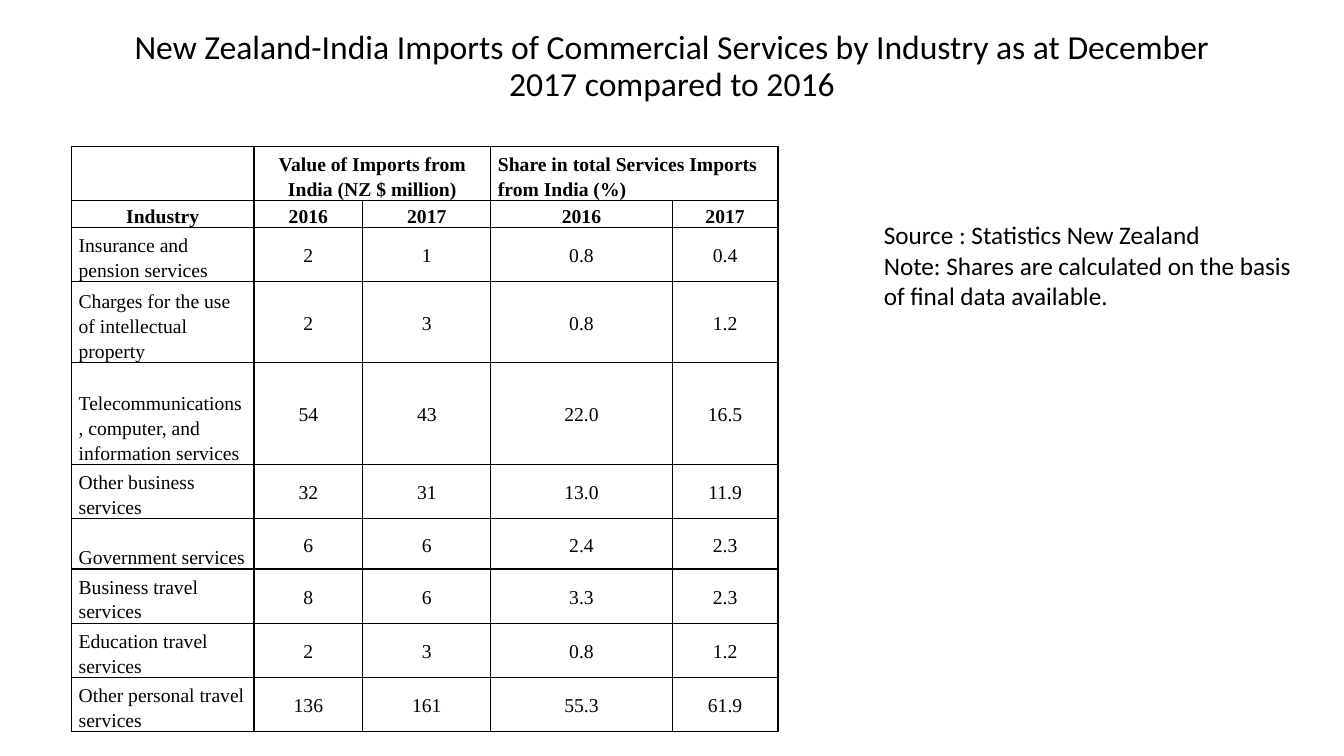
from lxml.etree import SubElement
from pptx import Presentation
from pptx.dml.color import RGBColor
from pptx.enum.text import MSO_ANCHOR as ANCHOR, MSO_AUTO_SIZE as AUTO, PP_ALIGN as ALIGN
from pptx.oxml.ns import qn
from pptx.util import Pt

BLACK = RGBColor(0, 0, 0)

TITLE = ["New Zealand-India Imports of Commercial Services by Industry as at December 2017 compared to 2016"]
NOTES = [
    "Source : Statistics New Zealand",
    "Note: Shares are calculated on the basis of final data available.",
]
ROWS = [
    ("", "Value of Imports from India (NZ $ million)", "", "Share in total Services Imports from India (%)", ""),
    ("Industry", "2016", "2017", "2016", "2017"),
    ("Insurance and pension services", "2", "1", "0.8", "0.4"),
    ("Charges for the use of intellectual property", "2", "3", "0.8", "1.2"),
    ("Telecommunications, computer, and information services", "54", "43", "22.0", "16.5"),
    ("Other business services", "32", "31", "13.0", "11.9"),
    ("Government services", "6", "6", "2.4", "2.3"),
    ("Business travel services", "8", "6", "3.3", "2.3"),
    ("Education travel services", "2", "3", "0.8", "1.2"),
    ("Other personal travel services", "136", "161", "55.3", "61.9"),
]
COL_WIDTHS = [130.3, 77.8, 91.4, 129.6, 75.6]
ROW_HEIGHTS = [36, 17.3, 36, 54, 72.7, 36, 36, 36, 36, 36]
HEADER_ROWS = 2
MERGED_COLS = (1, 3)

TITLE_FONT = {"name": "Calibri", "size": Pt(24)}
NOTE_FONT = {"name": "Calibri", "size": Pt(18)}
HEAD_FONT = {"name": "Times New Roman", "size": Pt(14), "bold": True}
BODY_FONT = {**HEAD_FONT, "bold": False}
TITLE_PARA = {"alignment": ALIGN.CENTER, "line_spacing": 0.9}
LABEL_PARA = {"alignment": ALIGN.LEFT, "line_spacing": 1.15}
HEAD_PARA = {**LABEL_PARA, "alignment": ALIGN.CENTER}
VALUE_PARA = {**HEAD_PARA, "space_after": Pt(10)}
CELL_INSETS = {"margin_left": Pt(5.1), "margin_right": Pt(5.1), "margin_top": 0, "margin_bottom": 0}


def apply(target, formats):
    for key, value in formats.items():
        setattr(target, key, value)


def write(tf, lines, font, para):
    for i, line in enumerate(lines):
        p = tf.add_paragraph() if i else tf.paragraphs[0]
        apply(p, para)
        r = p.add_run()
        r.text = line
        apply(r.font, font)
        r.font.color.rgb = BLACK


def add_text(s, box, lines, font, para, frame):
    tf = s.shapes.add_textbox(*map(Pt, box)).text_frame
    apply(tf, {"word_wrap": True, **frame})
    write(tf, lines, font, para)


def add_borders(cell):
    tc_pr = cell._tc.get_or_add_tcPr()
    for side in ("a:lnL", "a:lnR", "a:lnT", "a:lnB"):
        ln = SubElement(tc_pr, qn(side), w=str(Pt(1)))
        SubElement(SubElement(ln, qn("a:solidFill")), qn("a:srgbClr"), val=str(BLACK))


def cell_style(row, col):
    if row < HEADER_ROWS:
        left = row == 0 and col == MERGED_COLS[-1]
        return HEAD_FONT, LABEL_PARA if left else HEAD_PARA, ANCHOR.BOTTOM
    if col == 0:
        return BODY_FONT, LABEL_PARA, ANCHOR.BOTTOM
    return BODY_FONT, VALUE_PARA, ANCHOR.MIDDLE


def add_imports_table(s, left, top):
    size = map(Pt, (left, top, sum(COL_WIDTHS), sum(ROW_HEIGHTS)))
    table = s.shapes.add_table(len(ROWS), len(COL_WIDTHS), *size).table
    apply(table, {"first_row": False, "horz_banding": False})
    for column, width in zip(table.columns, COL_WIDTHS):
        column.width = Pt(width)
    for row, height in zip(table.rows, ROW_HEIGHTS):
        row.height = Pt(height)
    for col in MERGED_COLS:
        table.cell(0, col).merge(table.cell(0, col + 1))
    for i, values in enumerate(ROWS):
        for j, value in enumerate(values):
            cell = table.cell(i, j)
            add_borders(cell)
            cell.fill.background()
            if value:
                font, para, anchor = cell_style(i, j)
                apply(cell, {"vertical_anchor": anchor, **CELL_INSETS})
                write(cell.text_frame, [value], font, para)


def main():
    prs = Presentation()
    apply(prs, {"slide_width": Pt(960), "slide_height": Pt(540)})
    s = prs.slides.add_slide(prs.slide_layouts[6])
    add_text(s, (66, 28.8, 828, 38.2), TITLE, TITLE_FONT, TITLE_PARA,
             {"vertical_anchor": ANCHOR.MIDDLE, "auto_size": AUTO.NONE})
    add_text(s, (624.2, 153.4, 317.5, 72.7), NOTES, NOTE_FONT, {},
             {"auto_size": AUTO.SHAPE_TO_FIT_TEXT})
    add_imports_table(s, 51.1, 104.6)
    prs.save("out.pptx")


if __name__ == "__main__":
    main()
